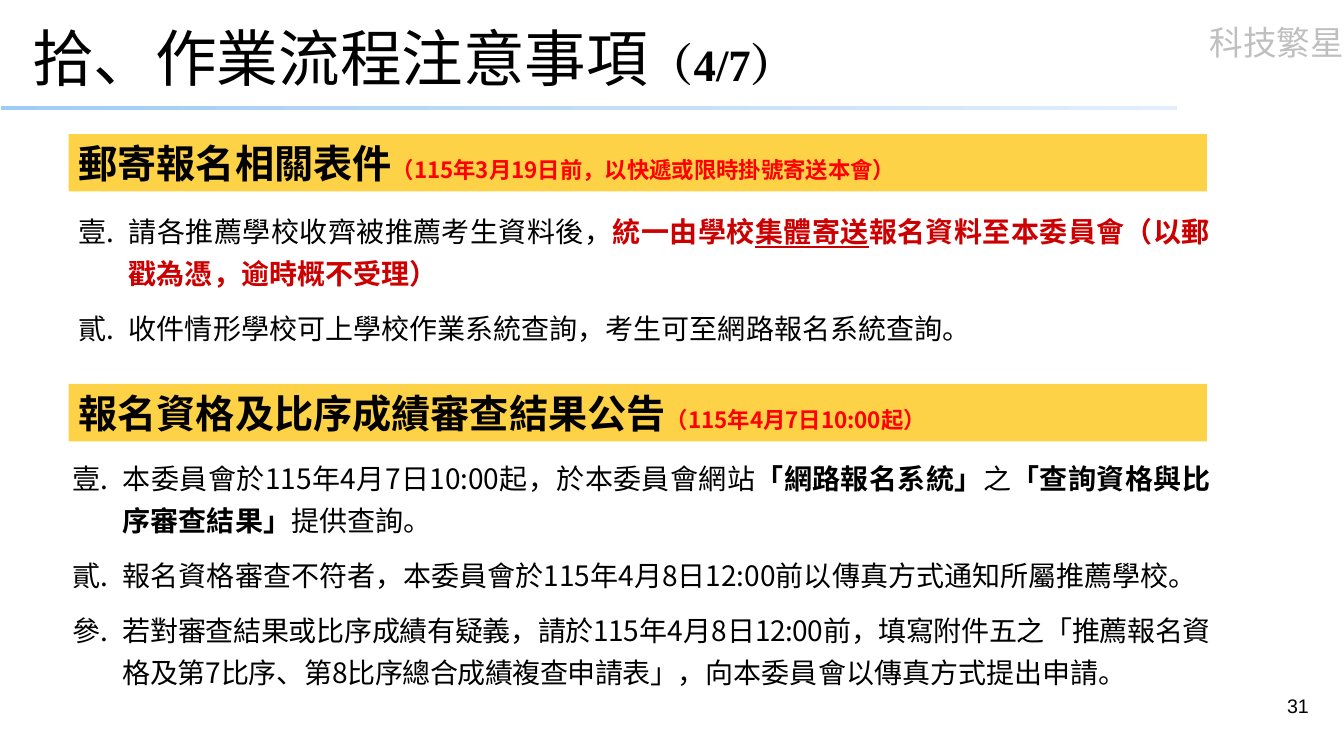
from pptx import Presentation
from pptx.dml.color import RGBColor
from pptx.enum.shapes import MSO_SHAPE
from pptx.enum.text import MSO_ANCHOR, PP_ALIGN
from pptx.oxml.ns import qn
from pptx.util import Inches, Pt
from lxml import etree

RECT = MSO_SHAPE.RECTANGLE
TOP, MIDDLE = MSO_ANCHOR.TOP, MSO_ANCHOR.MIDDLE
LEFT, RIGHT, JUSTIFY = PP_ALIGN.LEFT, PP_ALIGN.RIGHT, PP_ALIGN.JUSTIFY

THEME = {
    "black": "000000", "gray": "BFBFBF", "red": "FF0000", "dark_red": "CC0000",
    "band": "FDD247", "rule": ("9FCCF6", "E2EEFB"),
    "head_font": "Noto Sans CJK JP", "body_font": "Noto Sans CJK SC",
    "count_font": "Times New Roman", "number_font": "Arial",
    "title": 44, "count": 32, "heading": 28, "label": 24, "body": 20,
    "note": 16, "number": 14,
}


def style(size="body", font="body_font", color="black", **extra):
    return dict(size=size, font=font, color=color, **extra)


# Run styles
PLAIN = style()
BOLD = style(bold=True)
ALERT = style(color="dark_red", bold=True)
ALERT_LINE = style(color="dark_red", bold=True, underline=True)
TIGHT = style(spacing=-40)
HEADING = style("heading", bold=True)
NOTE = style("note", color="red", bold=True)

# Content: text, style
TITLE = [("拾、作業流程注意事項", style("title", "head_font")),
         ("（4/7）", style("count", "count_font", bold=True))]
LABEL = [("科技繁星", style("label", "head_font", "gray"))]
NUMBER = [("31", style("number", "number_font"))]

SECTIONS = [
    {"band_top": 1.33, "box": (0.68, 2, 11.42, 1.43),
     "heading": [("郵寄報名相關表件", HEADING),
                 ("（115年3月19日前，以快遞或限時掛號寄送本會）", NOTE)],
     "items": [
         [("請各推薦學校收齊被推薦考生資料後，", PLAIN), ("統一由學校", ALERT),
          ("集體寄送", ALERT_LINE),
          ("報名資料至本委員會（以郵戳為憑，逾時概不受理）", ALERT)],
         [("收件情形學校可上學校作業系統查詢，考生可至網路報名系統查詢。", PLAIN)],
     ]},
    {"band_top": 3.81, "box": (0.62, 4.45, 11.48, 2.6),
     "heading": [("報名資格及比序成績審查結果公告", HEADING),
                 ("（115年4月7日10:00起）", NOTE)],
     "items": [
         [("本委員會於115年4月7日10:00起，於本委員會網站", PLAIN),
          ("「網路報名系統」", BOLD), ("之", PLAIN),
          ("「查詢資格與比序審查結果」", BOLD), ("提供查詢。", PLAIN)],
         [("報名資格審查不符者，本委員會於115年4月8日12:00前以傳真方式"
           "通知所屬推薦學校。", PLAIN)],
         [("若對審查結果或比序成績有疑義，請於115年4月8日12:00前，填寫附件五之"
           "「推薦報名資格及第7比序、第8比序總合成績複查申請表」，", TIGHT),
          ("向本委員會以傳真方式提出申請。", PLAIN)],
     ]},
]


def add_runs(p, runs):
    for text, st in runs:
        r = p.add_run()
        r.text = text
        r.font.size = Pt(THEME[st["size"]])
        r.font.name = THEME[st["font"]]
        r.font.color.rgb = RGBColor.from_string(THEME[st["color"]])
        r.font.bold = st.get("bold", False)
        r.font.underline = st.get("underline", False)
        rPr = r._r.get_or_add_rPr()
        etree.SubElement(rPr, qn("a:ea")).set("typeface", THEME[st["font"]])
        if "spacing" in st:
            rPr.set("spc", str(st["spacing"]))


def add_line(sp, runs, align=LEFT, anchor=TOP):
    tf = sp.text_frame
    tf.word_wrap = True
    tf.vertical_anchor = anchor
    tf.paragraphs[0].alignment = align
    add_runs(tf.paragraphs[0], runs)


def add_box(s, box):
    return s.shapes.add_textbox(*map(Inches, box))


def add_rect(s, box):
    sp = s.shapes.add_shape(RECT, *map(Inches, box))
    sp.shadow.inherit = False
    sp.line.fill.background()
    return sp


def add_numbered(s, box, items):
    tf = add_box(s, box).text_frame
    tf.word_wrap = True
    for i, runs in enumerate(items):
        p = tf.paragraphs[0] if i == 0 else tf.add_paragraph()
        p.alignment = JUSTIFY
        p.line_spacing = Pt(30)
        p.space_before = Pt(3 if i else 0)
        p.space_after = Pt(6)
        pPr = p._p.get_or_add_pPr()
        pPr.set("marL", str(Inches(0.5)))
        pPr.set("indent", str(-Inches(0.5)))
        font = etree.SubElement(pPr, qn("a:buFont"))
        font.set("typeface", THEME["body_font"])
        etree.SubElement(pPr, qn("a:buAutoNum")).set("type", "ea1ChtPeriod")
        add_runs(p, runs)


prs = Presentation()
prs.slide_width, prs.slide_height = Inches(13.33), Inches(7.5)
s = prs.slides.add_slide(prs.slide_layouts[6])

# Header rule, label, title and page number
rule = add_rect(s, (0.01, 1.05, 11.66, 0.04))
rule.fill.gradient()
rule.fill.gradient_angle = 0
for stop, color in zip(rule.fill.gradient_stops, THEME["rule"]):
    stop.color.rgb = RGBColor.from_string(color)
add_line(add_box(s, (10.97, 0.17, 2.46, 0.5)), LABEL, RIGHT)
add_line(add_box(s, (0.22, 0.22, 11.29, 0.69)), TITLE, anchor=MIDDLE)
add_line(add_box(s, (9.97, 6.83, 3.11, 0.52)), NUMBER, RIGHT)

# Sections: heading band and numbered notes
for section in SECTIONS:
    add_numbered(s, section["box"], section["items"])
    band = add_rect(s, (0.68, section["band_top"], 11.29, 0.57))
    band.fill.solid()
    band.fill.fore_color.rgb = RGBColor.from_string(THEME["band"])
    add_line(band, section["heading"])

prs.save("out.pptx")
